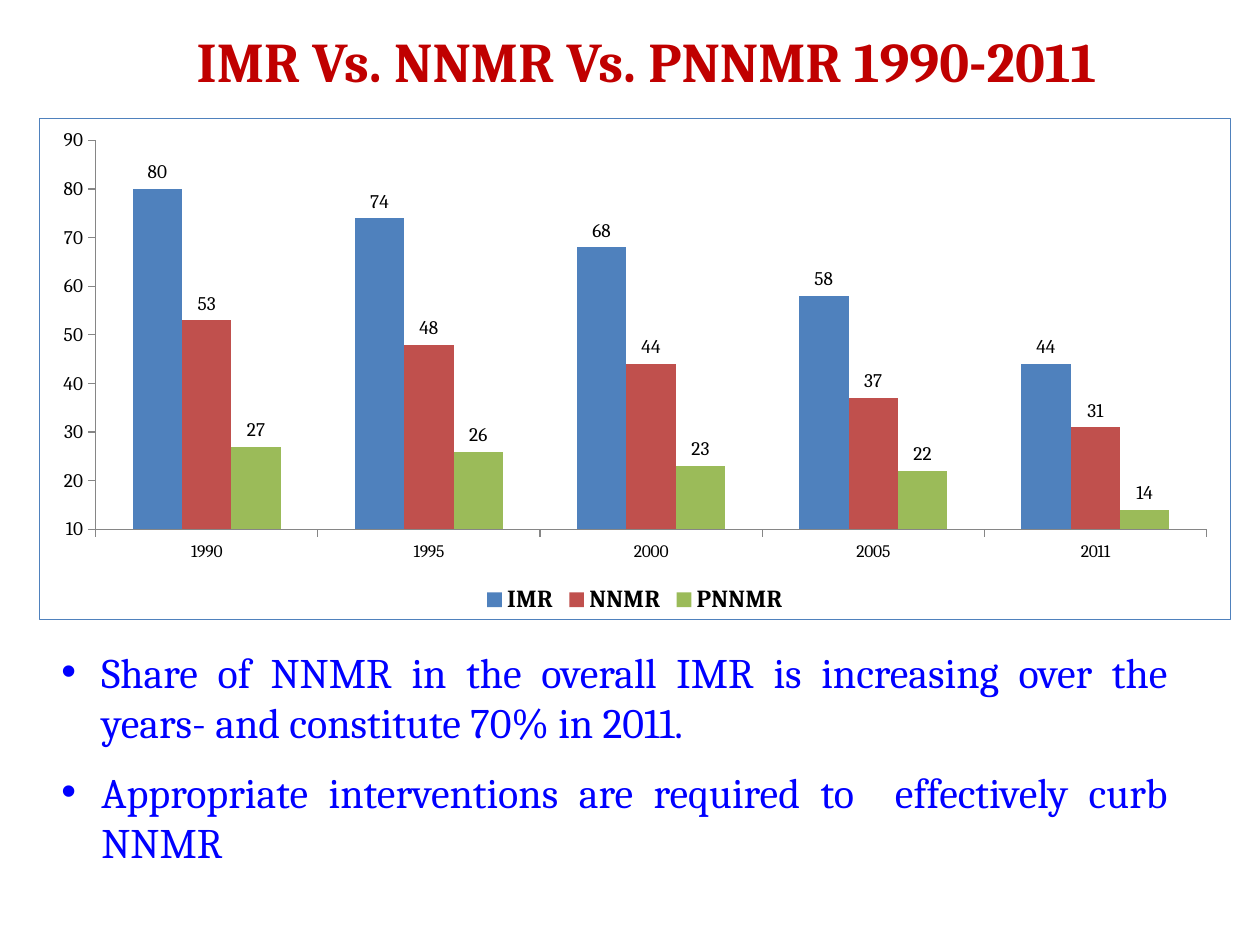
"""Build a slide comparing IMR, NNMR and PNNMR from 1990 to 2011."""
from lxml import etree
from pptx import Presentation
from pptx.chart.data import CategoryChartData
from pptx.dml.color import RGBColor
from pptx.enum.chart import XL_CHART_TYPE, XL_LABEL_POSITION, XL_LEGEND_POSITION, XL_TICK_MARK
from pptx.enum.text import PP_ALIGN
from pptx.oxml import parse_xml
from pptx.oxml.ns import nsdecls, qn
from pptx.util import Emu, Pt

COLUMNS = XL_CHART_TYPE.COLUMN_CLUSTERED
OUTSIDE_END = XL_LABEL_POSITION.OUTSIDE_END
BOTTOM = XL_LEGEND_POSITION.BOTTOM
TICK_OUT = XL_TICK_MARK.OUTSIDE
CENTER, JUSTIFY = PP_ALIGN.CENTER, PP_ALIGN.JUSTIFY

PX = 914400 // 126
FONT = "Cambria"
COLORS = {
    "title": "C00000", "points": "0000FF", "chart_text": "000000", "axis": "868686",
    "border": "4F81BD", "IMR": "4F81BD", "NNMR": "C0504D", "PNNMR": "9BBB59",
}

TITLE = ["IMR Vs. NNMR Vs. PNNMR 1990-2011"]
POINTS = [
    "Share of NNMR in the overall IMR is increasing over the years- and constitute 70% in 2011.",
    "Appropriate interventions are required to  effectively curb NNMR",
]
YEARS = ["1990", "1995", "2000", "2005", "2011"]
RATES = {
    "IMR": [80, 74, 68, 58, 44],
    "NNMR": [53, 48, 44, 37, 31],
    "PNNMR": [27, 26, 23, 22, 14],
}
TITLE_BOX = (59, 20, 1176, 81)
CHART_BOX = (39, 118, 1192, 502)
POINTS_BOX = (49, 640, 1131, 236)


def px(*lengths):
    return [Emu(length * PX) for length in lengths]


def rgb(key):
    return RGBColor.from_string(COLORS[key])


def style_font(font, size, color, bold=False):
    font.name, font.size, font.bold = FONT, Pt(size), bold
    font.color.rgb = rgb(color)


def add_text(slide, box, paragraphs, *, size, color, align, bold=False, indent=0, gap=0):
    frame = slide.shapes.add_textbox(*px(*box)).text_frame
    frame.word_wrap = True
    for index, words in enumerate(paragraphs):
        paragraph = frame.add_paragraph() if index else frame.paragraphs[0]
        paragraph.alignment = align
        paragraph.space_before = Pt(gap if index else 0)
        run = paragraph.add_run()
        run.text = words
        style_font(run.font, size, color, bold)
        if indent:
            properties = paragraph._p.get_or_add_pPr()
            properties.set("marL", str(indent * PX))
            properties.set("indent", str(-indent * PX))
            etree.SubElement(properties, qn("a:buFont")).set("typeface", "Arial")
            etree.SubElement(properties, qn("a:buChar")).set("char", "•")


def style_axis(axis, size):
    axis.has_major_gridlines = False
    axis.major_tick_mark = TICK_OUT
    axis.format.line.color.rgb = rgb("axis")
    axis.format.line.width = Pt(0.75)
    style_font(axis.tick_labels.font, size, "chart_text")


def add_rates_chart(slide):
    rates = CategoryChartData()
    rates.categories = YEARS
    for name, values in RATES.items():
        rates.add_series(name, values)
    chart = slide.shapes.add_chart(COLUMNS, *px(*CHART_BOX), rates).chart
    chart.has_title = False
    style_font(chart.font, 10, "chart_text")

    style_axis(chart.category_axis, 10)
    style_axis(chart.value_axis, 11)
    chart.value_axis.minimum_scale = 10
    chart.value_axis.maximum_scale = 90
    chart.value_axis.major_unit = 10

    chart.has_legend = True
    chart.legend.position = BOTTOM
    chart.legend.include_in_layout = False
    style_font(chart.legend.font, 14, "chart_text", bold=True)

    plot = chart.plots[0]
    plot.gap_width, plot.overlap = 150, 0
    plot.vary_by_categories = False
    for series in plot.series:
        series.format.fill.solid()
        series.format.fill.fore_color.rgb = rgb(series.name)
        labels = series.data_labels
        labels.show_value = True
        labels.position = OUTSIDE_END
        style_font(labels.font, 11, "chart_text")

    border = parse_xml(
        f'<c:spPr {nsdecls("c", "a")}><a:noFill/><a:ln w="{Pt(0.75)}"><a:solidFill>'
        f'<a:srgbClr val="{COLORS["border"]}"/></a:solidFill></a:ln></c:spPr>'
    )
    chart.element.find(qn("c:chart")).addnext(border)


def main():
    deck = Presentation()
    deck.slide_width, deck.slide_height = px(1260, 945)
    slide = deck.slides.add_slide(deck.slide_layouts[6])
    add_rates_chart(slide)
    add_text(slide, TITLE_BOX, TITLE, size=32, color="title", align=CENTER, bold=True)
    add_text(slide, POINTS_BOX, POINTS, size=24, color="points", align=JUSTIFY, indent=40, gap=11)
    deck.save("out.pptx")


if __name__ == "__main__":
    main()
